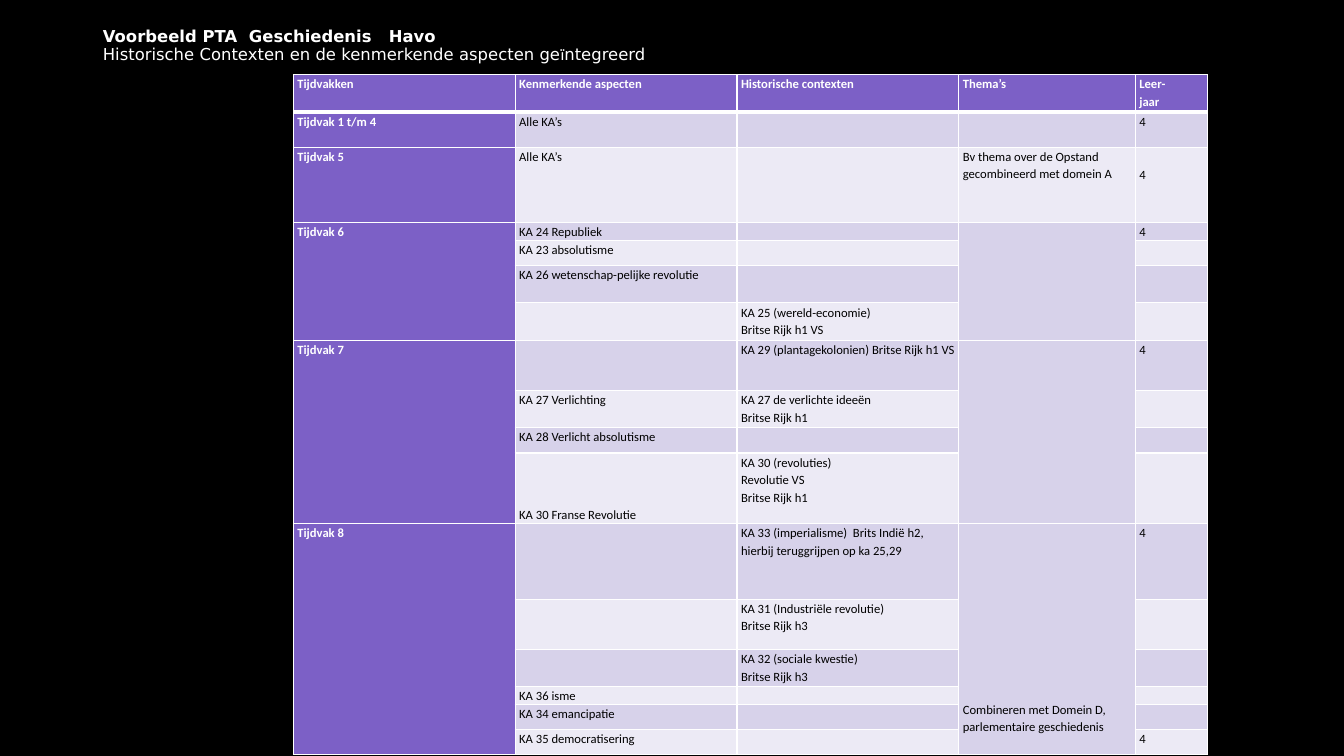
from dataclasses import dataclass

from lxml.etree import SubElement as Sub
from pptx import Presentation
from pptx.dml.color import RGBColor as Rgb
from pptx.enum.text import MSO_ANCHOR as Anchor, MSO_AUTO_SIZE as Auto, PP_ALIGN as Align
from pptx.oxml.ns import qn
from pptx.util import Pt


@dataclass(frozen=True)
class Theme:
    back: str = "000000"
    light: str = "FFFFFF"
    dark: str = "000000"
    head: str = "7C60C6"
    bands: tuple = ("ECEAF5", "D7D2EA")
    sans: str = "DejaVu Sans"
    body: str = "Calibri"
    title: float = 11.7
    cell: float = 9
    thin: float = 1
    thick: float = 3


class Board:
    def __init__(self, deck, theme):
        self.theme = theme
        self.slide = deck.slides.add_slide(deck.slide_layouts[5])
        fill = self.slide.background.fill
        fill.solid()
        fill.fore_color.rgb = Rgb.from_string(theme.back)

    def px(self, count):
        return count * 9144

    def run(self, para, text, size, color, face, bold=False):
        run = para.add_run()
        run.text = text
        font = run.font
        font.size, font.name, font.bold = Pt(size), face, bold
        font.color.rgb = Rgb.from_string(color)

    def title(self, box, lines, drop):
        look = self.theme
        shape = self.slide.shapes.title
        shape.left, shape.top, shape.width, shape.height = map(self.px, box)
        frame = shape.text_frame
        frame.auto_size, frame.word_wrap = Auto.NONE, True
        frame.vertical_anchor = Anchor.MIDDLE
        frame.margin_top, frame.margin_bottom = 0, self.px(drop)
        para = frame.paragraphs[0]
        para.alignment, para.line_spacing = Align.LEFT, 0.9
        for at, line in enumerate(lines):
            if at:
                para.add_line_break()
            for text, face, bold in line:
                self.run(para, text, look.title, look.light, face, bold)

    def edge(self, cell, low):
        look = self.theme
        props = cell._tc.get_or_add_tcPr()
        for side in "LRTB":
            width = low if side == "B" else look.thin
            line = Sub(props, qn(f"a:ln{side}"), w=str(Pt(width)))
            Sub(Sub(line, qn("a:solidFill")), qn("a:srgbClr"), val=look.light)

    def cell(self, cell, text, fill, color, bold, low, gap):
        look = self.theme
        self.edge(cell, low)
        cell.fill.solid()
        cell.fill.fore_color.rgb = Rgb.from_string(fill)
        cell.margin_left = cell.margin_right = self.px(4)
        cell.margin_top, cell.margin_bottom = self.px(gap), 0
        frame = cell.text_frame
        for at, line in enumerate(text.split("\n")):
            para = frame.add_paragraph() if at else frame.paragraphs[0]
            para.line_spacing = 1.15
            if line:
                self.run(para, line, look.cell, color, look.body, bold)
            else:
                Sub(para._p, qn("a:endParaRPr"), sz=str(int(look.cell * 100)))

    def table(self, left, top, cols, rows, spans, gaps):
        look = self.theme
        high = sum(row[0] for row in rows)
        box = map(self.px, (left, top, sum(cols), high))
        grid = self.slide.shapes.add_table(len(rows), len(cols), *box).table
        grid.first_row = grid.horz_banding = False
        for col, width in zip(grid.columns, cols):
            col.width = self.px(width)
        for r, (height, *texts) in enumerate(rows):
            grid.rows[r].height = self.px(height)
            for c, text in enumerate(texts):
                head = r == 0 or c == 0
                fill = look.head if head else look.bands[r % 2]
                color = look.light if head else look.dark
                low = look.thick if r == 0 else look.thin
                self.cell(grid.cell(r, c), text, fill, color, head, low, gaps.get((r, c), 0))
        for first, last in spans:
            for c in (0, 3):
                grid.cell(first, c).merge(grid.cell(last, c))


COLS = [220, 220, 220, 175, 72]
ROWS = [
    (37, "Tijdvakken", "Kenmerkende aspecten", "Historische contexten", "Thema’s", "Leer-\njaar"),
    (35, "Tijdvak 1 t/m 4", "Alle KA’s", "", "", "4"),
    (75, "Tijdvak 5", "Alle KA’s", "", "Bv thema over de Opstand gecombineerd met domein A", "4"),
    (17, "Tijdvak 6", "KA 24 Republiek", "", "", "4"),
    (25, "", "KA 23 absolutisme", "", "", ""),
    (37, "", "KA 26 wetenschap-pelijke revolutie", "", "", ""),
    (37, "", "", "KA 25 (wereld-economie)\nBritse Rijk h1 VS", "", ""),
    (50, "Tijdvak 7", "", "KA 29 (plantagekolonien) Britse Rijk h1 VS", "", "4"),
    (37, "", "KA 27 Verlichting", "KA 27 de verlichte ideeën\nBritse Rijk h1", "", ""),
    (25, "", "KA 28 Verlicht absolutisme", "", "", ""),
    (70, "", "KA 30 Franse Revolutie", "KA 30 (revoluties)\nRevolutie VS\nBritse Rijk h1", "", ""),
    (75, "Tijdvak 8", "", "KA 33 (imperialisme)  Brits Indië h2, hierbij teruggrijpen op ka 25,29",
     "Combineren met Domein D, parlementaire geschiedenis", "4"),
    (50, "", "", "KA 31 (Industriële revolutie)\nBritse Rijk h3", "", ""),
    (37, "", "", "KA 32 (sociale kwestie)\nBritse Rijk h3", "", ""),
    (17, "", "KA 36 isme", "", "", ""),
    (25, "", "KA 34 emancipatie", "", "", ""),
    (25, "", "KA 35 democratisering", "", "", "4"),
]
SPANS = [(3, 6), (7, 10), (11, 16)]
GAPS = {(2, 4): 18, (10, 1): 52, (11, 3): 175}


def main():
    deck = Presentation()
    theme = Theme()
    deck.slide_width, deck.slide_height = 1333 * 9144, 750 * 9144
    board = Board(deck, theme)
    board.title((92, 40, 1150, 80), [
        [("Voorbeeld PTA  Geschiedenis   Havo", theme.sans, True)],
        [("Historische Contexten en de kenmerkende aspecten ge", theme.sans, False),
         ("ï", theme.body, False),
         ("ntegreerd", theme.sans, False)],
    ], 69)
    board.table(291, 74, COLS, ROWS, SPANS, GAPS)
    deck.save("out.pptx")


if __name__ == "__main__":
    main()
